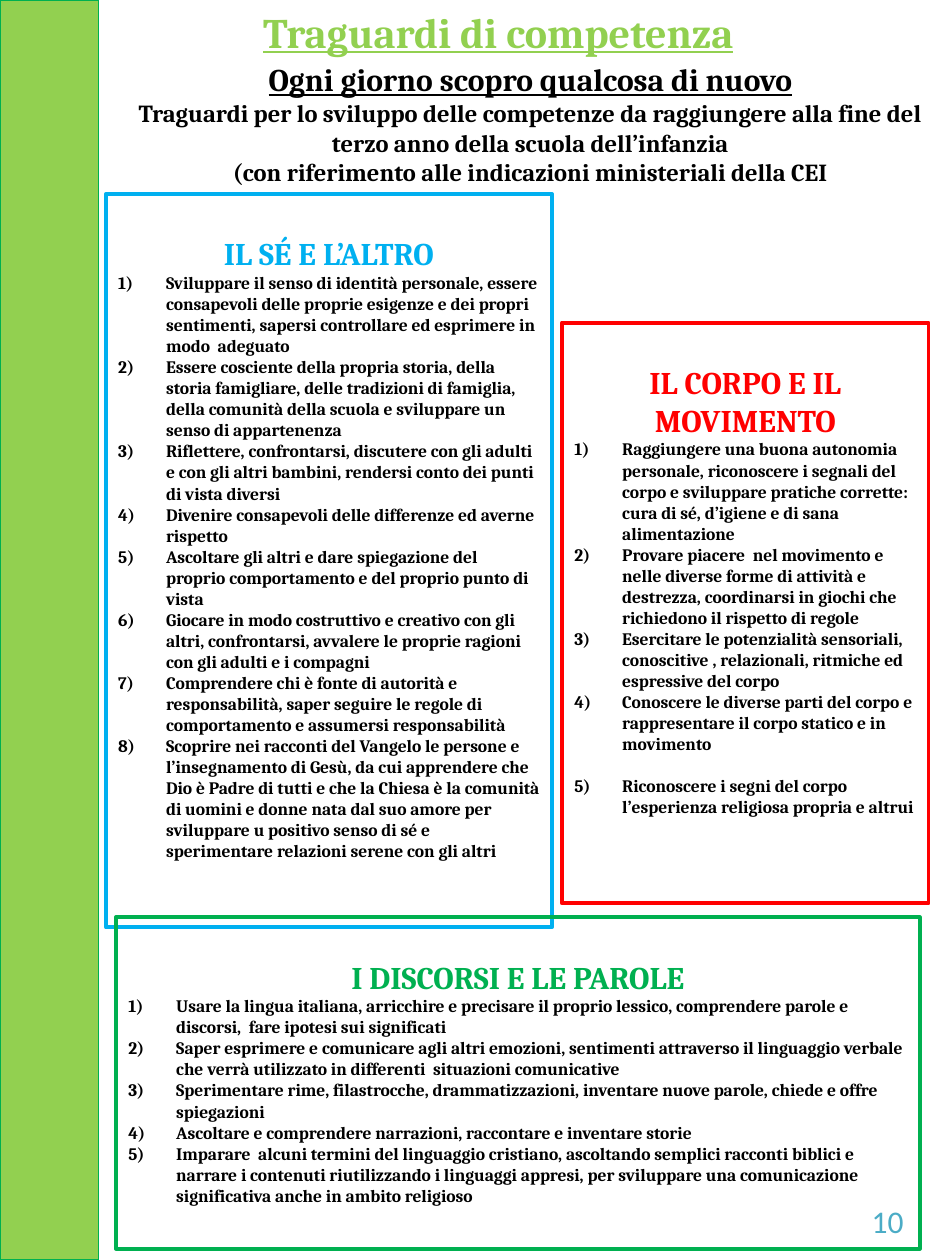
from pptx import Presentation
from pptx.dml.color import RGBColor
from pptx.enum.shapes import MSO_SHAPE
from pptx.enum.text import MSO_ANCHOR, PP_ALIGN
from pptx.oxml.ns import qn
from pptx.util import Inches, Pt
from lxml.etree import SubElement

GREEN, LIME, BLACK = "00B050", "92D050", "000000"
INDENT = 0.38

TITLE = "Traguardi di competenza"
INTRO = [
    ("Ogni giorno scopro qualcosa di nuovo", 18, True),
    ("Traguardi per lo sviluppo delle competenze da raggiungere alla fine del "
     "terzo anno della scuola dell’infanzia", 14, False),
    ("(con riferimento alle indicazioni ministeriali della CEI", 14, False),
]
PAGE_NUMBER = "10"

# Each panel: heading, colour, (left, top, width, height), goals, goals set apart
PANELS = [
    ("IL SÉ E L’ALTRO", "00B0F0", (0.84, 1.54, 3.54, 5.82), [
        "Sviluppare il senso di identità personale, essere consapevoli delle proprie "
        "esigenze e dei propri sentimenti, sapersi controllare ed esprimere in modo  adeguato",
        "Essere cosciente della propria storia, della storia famigliare, delle tradizioni di "
        "famiglia, della comunità della scuola e sviluppare un senso di appartenenza",
        "Riflettere, confrontarsi, discutere con gli adulti e con gli altri bambini, "
        "rendersi conto dei punti di vista diversi",
        "Divenire consapevoli delle differenze ed averne rispetto",
        "Ascoltare gli altri e dare spiegazione del proprio comportamento e del proprio "
        "punto di vista",
        "Giocare in modo costruttivo e creativo con gli altri, confrontarsi, avvalere le "
        "proprie ragioni con gli adulti e i compagni",
        "Comprendere chi è fonte di autorità e responsabilità, saper seguire le regole di "
        "comportamento e assumersi responsabilità",
        "Scoprire nei racconti del Vangelo le persone e l’insegnamento di Gesù, da cui "
        "apprendere che Dio è Padre di tutti e che la Chiesa è la comunità di uomini e donne "
        "nata dal suo amore per sviluppare u positivo senso di sé e sperimentare relazioni "
        "serene con gli altri",
    ], ()),
    ("IL CORPO E IL MOVIMENTO", "FF0000", (4.46, 2.56, 2.91, 4.61), [
        "Raggiungere una buona autonomia personale, riconoscere i segnali del corpo e "
        "sviluppare pratiche corrette: cura di sé, d’igiene e di sana alimentazione",
        "Provare piacere  nel movimento e nelle diverse forme di attività e destrezza, "
        "coordinarsi in giochi che richiedono il rispetto di regole",
        "Esercitare le potenzialità sensoriali, conoscitive , relazionali, ritmiche ed "
        "espressive del corpo",
        "Conoscere le diverse parti del corpo e rappresentare il corpo statico e in movimento",
        "Riconoscere i segni del corpo l’esperienza religiosa propria e altrui",
    ], (5,)),
    ("I DISCORSI E LE PAROLE", GREEN, (0.92, 7.28, 6.38, 2.63), [
        "Usare la lingua italiana, arricchire e precisare il proprio lessico, comprendere "
        "parole e discorsi,  fare ipotesi sui significati",
        "Saper esprimere e comunicare agli altri emozioni, sentimenti attraverso il "
        "linguaggio verbale che verrà utilizzato in differenti  situazioni comunicative",
        "Sperimentare rime, filastrocche, drammatizzazioni, inventare nuove parole, chiede "
        "e offre spiegazioni",
        "Ascoltare e comprendere narrazioni, raccontare e inventare storie",
        "Imparare  alcuni termini del linguaggio cristiano, ascoltando semplici racconti "
        "biblici e narrare i contenuti riutilizzando i linguaggi appresi, per sviluppare una "
        "comunicazione significativa anche in ambito religioso",
    ], ()),
]


def color(value):
    return RGBColor.from_string(value)


def add_rectangle(slide, box, line, line_width, fill=None):
    shape = slide.shapes.add_shape(MSO_SHAPE.RECTANGLE, *map(Inches, box))
    shape.shadow.inherit = False
    if fill:
        shape.fill.solid()
        shape.fill.fore_color.rgb = color(fill)
    else:
        shape.fill.background()
    shape.line.color.rgb = color(line)
    shape.line.width = Pt(line_width)
    return shape


def add_text_box(slide, box, wrap=True):
    frame = slide.shapes.add_textbox(*map(Inches, box)).text_frame
    frame.word_wrap = wrap
    return frame


def write(frame, text, size, ink=BLACK, align=PP_ALIGN.CENTER, **font):
    """Fill the empty first paragraph, or append a new one."""
    first = frame.paragraphs[0]
    paragraph = frame.add_paragraph() if first.runs else first
    paragraph.alignment = align
    run = paragraph.add_run()
    run.text = text
    run.font.color.rgb = color(ink)
    settings = {"name": "Cambria", "size": Pt(size), "bold": True, **font}
    for name, value in settings.items():
        setattr(run.font, name, value)
    return paragraph


def number(paragraph):
    """Number a paragraph as 1), 2), ... with a hanging indent."""
    properties = paragraph._p.get_or_add_pPr()
    properties.set("marL", str(Inches(INDENT)))
    properties.set("indent", str(-Inches(INDENT)))
    SubElement(properties, qn("a:buFont"), typeface="+mj-lt")
    SubElement(properties, qn("a:buAutoNum"), type="arabicParenR")


def add_panel(slide, heading, accent, box, goals, set_apart):
    frame = add_rectangle(slide, box, accent, 2.25).text_frame
    frame.word_wrap = True
    frame.vertical_anchor = MSO_ANCHOR.TOP
    frame.margin_top = Inches(0.32)
    write(frame, heading, 18, accent)
    for position, goal in enumerate(goals, 1):
        paragraph = write(frame, goal, 10, align=PP_ALIGN.LEFT)
        if position in set_apart:
            paragraph.space_before = Pt(12)
        number(paragraph)


def main():
    presentation = Presentation()
    presentation.slide_width, presentation.slide_height = Inches(7.5), Inches(10)
    slide = presentation.slides.add_slide(presentation.slide_layouts[6])

    add_rectangle(slide, (0, 0, 0.78, 10), GREEN, 0.75, LIME)
    title = add_text_box(slide, (1.93, 0, 4.05, 0.91), wrap=False)
    write(title, TITLE, 24, LIME, underline=True)
    intro = add_text_box(slide, (0.92, 0.43, 6.58, 1.11))
    for text, size, underline in INTRO:
        write(intro, text, size, underline=underline)
    for panel in PANELS:
        add_panel(slide, *panel)
    page = add_text_box(slide, (6.82, 9.49, 0.55, 0.4))
    write(page, PAGE_NUMBER, 18, "4BACC6", PP_ALIGN.LEFT, name="Calibri", bold=False)

    presentation.save("out.pptx")


if __name__ == "__main__":
    main()
